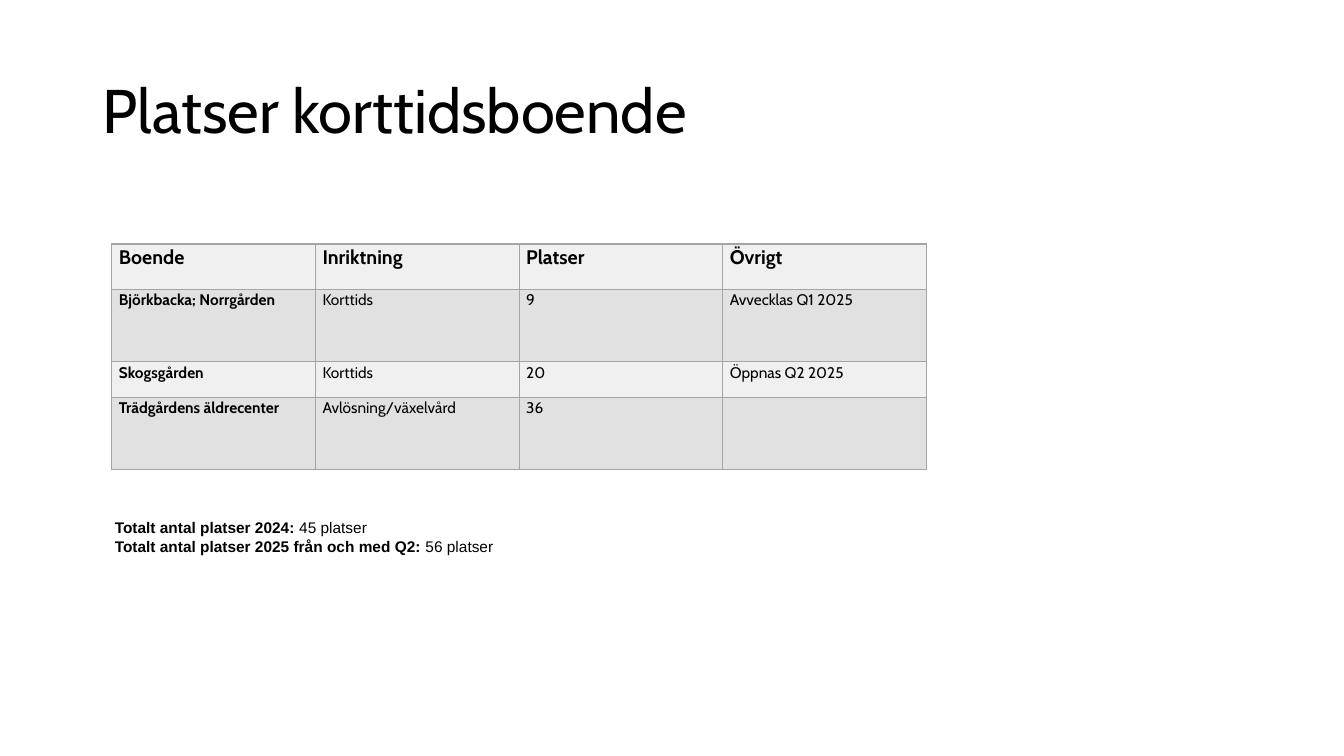
"""Build the slide on short-term care places."""
from dataclasses import dataclass
from typing import Any

from lxml.etree import SubElement
from pptx import Presentation
from pptx.dml.color import RGBColor
from pptx.enum.text import MSO_ANCHOR as Anchor, MSO_AUTO_SIZE as AutoSize, PP_ALIGN as Align
from pptx.oxml.ns import qn
from pptx.util import Inches, Pt

BLACK = RGBColor(0x00, 0x00, 0x00)
LIGHT = RGBColor(0xF0, 0xF0, 0xF0)
SHADE = RGBColor(0xE1, 0xE1, 0xE1)
BORDER = RGBColor(0xA5, 0xA5, 0xA5)

PLACES = [
    ["Boende", "Inriktning", "Platser", "Övrigt"],
    ["Björkbacka; Norrgården", "Korttids", "9", "Avvecklas Q1 2025"],
    ["Skogsgården", "Korttids", "20", "Öppnas Q2 2025"],
    ["Trädgårdens äldrecenter", "Avlösning/växelvård", "36", ""],
]
ROW_HEIGHTS = [0.45, 0.72, 0.35, 0.72]
TOTALS = [
    ("Totalt antal platser 2024:", " 45 platser"),
    ("Totalt antal platser 2025 från och med Q2:", " 56 platser"),
]


def apply(target, values):
    for name, value in values.items():
        setattr(target, name, value)


@dataclass
class PlacesSlide:
    page: Any
    heading_font: str = "Cabin"
    body_font: str = "Arial"

    def add_span(self, para, text, font, size, bold=False):
        span = para.add_run()
        span.text = text
        apply(span.font, {"name": font, "size": Pt(size), "bold": bold})
        span.font.color.rgb = BLACK

    def title(self, text, left, top, width, height):
        box = self.page.shapes.title
        apply(box, {"left": Inches(left), "top": Inches(top),
                    "width": Inches(width), "height": Inches(height)})
        apply(box.text_frame, {"vertical_anchor": Anchor.MIDDLE, "word_wrap": True})
        para = box.text_frame.paragraphs[0]
        apply(para, {"alignment": Align.LEFT, "line_spacing": 0.9})
        self.add_span(para, text, self.heading_font, 44)

    def outline(self, cell):
        properties = cell._tc.get_or_add_tcPr()
        for side in ("a:lnL", "a:lnR", "a:lnT", "a:lnB"):
            line = SubElement(properties, qn(side), w=str(Pt(1)))
            fill = SubElement(line, qn("a:solidFill"))
            SubElement(fill, qn("a:srgbClr"), val=str(BORDER))

    def table(self, rows, heights, left, top, column_width):
        columns = len(rows[0])
        frame = self.page.shapes.add_table(
            len(rows), columns, Inches(left), Inches(top),
            Inches(column_width * columns), Inches(sum(heights)))
        grid = frame.table
        for column in grid.columns:
            column.width = Inches(column_width)
        for row_index, (texts, height) in enumerate(zip(rows, heights)):
            grid.rows[row_index].height = Inches(height)
            for column_index, text in enumerate(texts):
                cell = grid.cell(row_index, column_index)
                apply(cell, {"margin_left": Inches(0.07), "margin_right": Inches(0.07),
                             "margin_top": 0, "margin_bottom": 0})
                self.outline(cell)
                cell.fill.solid()
                cell.fill.fore_color.rgb = SHADE if row_index % 2 else LIGHT
                if text:
                    para = cell.text_frame.paragraphs[0]
                    apply(para, {"line_spacing": 1.07, "space_after": Pt(8)})
                    header = row_index == 0
                    self.add_span(para, text, self.heading_font, 14 if header else 11,
                                  header or column_index == 0)

    def totals(self, lines, left, top, width, height):
        box = self.page.shapes.add_textbox(
            Inches(left), Inches(top), Inches(width), Inches(height))
        frame = box.text_frame
        apply(frame, {"word_wrap": True, "vertical_anchor": Anchor.MIDDLE,
                      "auto_size": AutoSize.SHAPE_TO_FIT_TEXT})
        for index, (label, value) in enumerate(lines):
            para = frame.add_paragraph() if index else frame.paragraphs[0]
            self.add_span(para, label, self.body_font, 11, True)
            self.add_span(para, value, self.body_font, 11)


def main():
    deck = Presentation()
    apply(deck, {"slide_width": Inches(13.33), "slide_height": Inches(7.5)})
    slide = PlacesSlide(deck.slides.add_slide(deck.slide_layouts[5]))
    slide.title("Platser korttidsboende", 0.92, 0.4, 11.5, 1.45)
    slide.table(PLACES, ROW_HEIGHTS, 1.11, 2.42, 2.02)
    slide.totals(TOTALS, 1.04, 5.09, 14.08, 0.47)
    deck.save("out.pptx")


if __name__ == "__main__":
    main()
